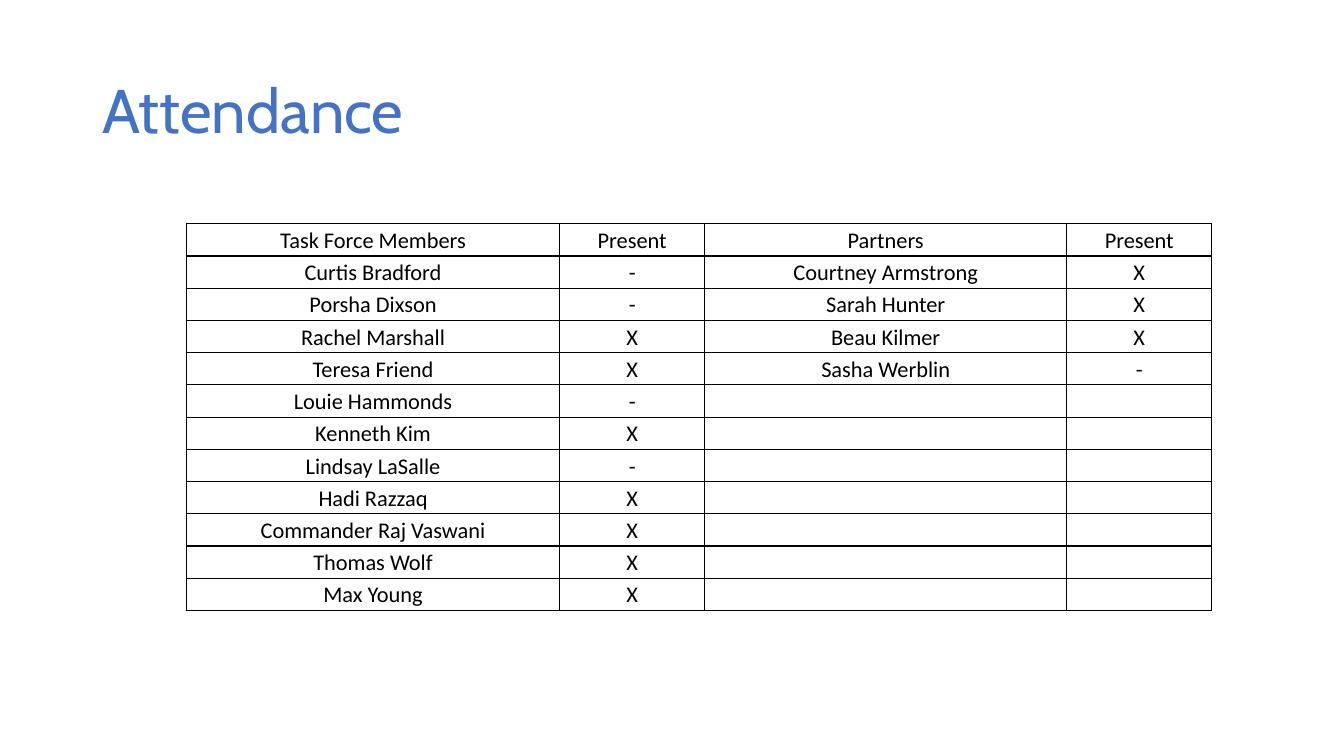
from itertools import zip_longest

from lxml.etree import SubElement
from pptx import Presentation
from pptx.dml.color import RGBColor
from pptx.enum.text import MSO_ANCHOR as Anchor, PP_ALIGN as Align
from pptx.oxml.ns import qn
from pptx.util import Inches, Pt

BLUE = RGBColor(0x44, 0x72, 0xC4)
BLACK = RGBColor(0x00, 0x00, 0x00)

COLUMN_WIDTHS = (3.7, 1.44, 3.59, 1.44)
ROW_HEIGHT = 0.32
TASK_FORCE = (
    ("Task Force Members", "Present"),
    ("Curtis Bradford", "-"),
    ("Porsha Dixson", "-"),
    ("Rachel Marshall", "X"),
    ("Teresa Friend", "X"),
    ("Louie Hammonds", "-"),
    ("Kenneth Kim", "X"),
    ("Lindsay LaSalle", "-"),
    ("Hadi Razzaq", "X"),
    ("Commander Raj Vaswani", "X"),
    ("Thomas Wolf", "X"),
    ("Max Young", "X"),
)
PARTNERS = (
    ("Partners", "Present"),
    ("Courtney Armstrong", "X"),
    ("Sarah Hunter", "X"),
    ("Beau Kilmer", "X"),
    ("Sasha Werblin", "-"),
)

TITLE_FONT = {"name": "Cabin", "size": Pt(44)}
CELL_FONT = {"name": "Calibri", "size": Pt(16)}
CELL_FORMAT = {
    "vertical_anchor": Anchor.MIDDLE,
    "margin_left": Inches(0.07),
    "margin_right": Inches(0.07),
    "margin_top": 0,
    "margin_bottom": 0,
}


def set_attributes(target, values):
    for name, value in values.items():
        setattr(target, name, value)


def write_text(paragraph, text, font, color, layout):
    set_attributes(paragraph, layout)
    run = paragraph.add_run()
    run.text = text
    set_attributes(run.font, font)
    run.font.color.rgb = color


def add_title(slide, text):
    box = slide.shapes.add_textbox(Inches(0.92), Inches(0.4), Inches(11.5), Inches(1.45))
    frame = box.text_frame
    set_attributes(frame, {"word_wrap": True, "vertical_anchor": Anchor.MIDDLE})
    write_text(frame.paragraphs[0], text, TITLE_FONT, BLUE, {"line_spacing": 0.9})


def add_borders(cell, color, width):
    properties = cell._tc.get_or_add_tcPr()
    for side in ("a:lnL", "a:lnR", "a:lnT", "a:lnB"):
        line = SubElement(properties, qn(side), w=str(width))
        fill = SubElement(line, qn("a:solidFill"))
        SubElement(fill, qn("a:srgbClr"), val=str(color))


def format_cell(cell, text):
    set_attributes(cell, CELL_FORMAT)
    add_borders(cell, BLACK, Pt(1))
    cell.fill.background()
    if text:
        layout = {"alignment": Align.CENTER, "line_spacing": 1.07}
        write_text(cell.text_frame.paragraphs[0], text, CELL_FONT, BLACK, layout)


def add_attendance_table(slide, rows):
    frame = slide.shapes.add_table(
        len(rows), len(COLUMN_WIDTHS), Inches(1.85), Inches(2.22),
        Inches(sum(COLUMN_WIDTHS)), Inches(ROW_HEIGHT * len(rows)),
    )
    table = frame.table
    set_attributes(table, {"first_row": False, "horz_banding": False})
    for column, width in zip(table.columns, COLUMN_WIDTHS):
        column.width = Inches(width)
    for row, texts in zip(table.rows, rows):
        row.height = Inches(ROW_HEIGHT)
        for cell, text in zip(row.cells, texts):
            format_cell(cell, text)


def main():
    presentation = Presentation()
    set_attributes(presentation, {"slide_width": Inches(13.33), "slide_height": Inches(7.5)})
    slide = presentation.slides.add_slide(presentation.slide_layouts[6])
    add_title(slide, "Attendance")
    pairs = zip_longest(TASK_FORCE, PARTNERS, fillvalue=("", ""))
    add_attendance_table(slide, [member + partner for member, partner in pairs])
    presentation.save("out.pptx")


if __name__ == "__main__":
    main()
